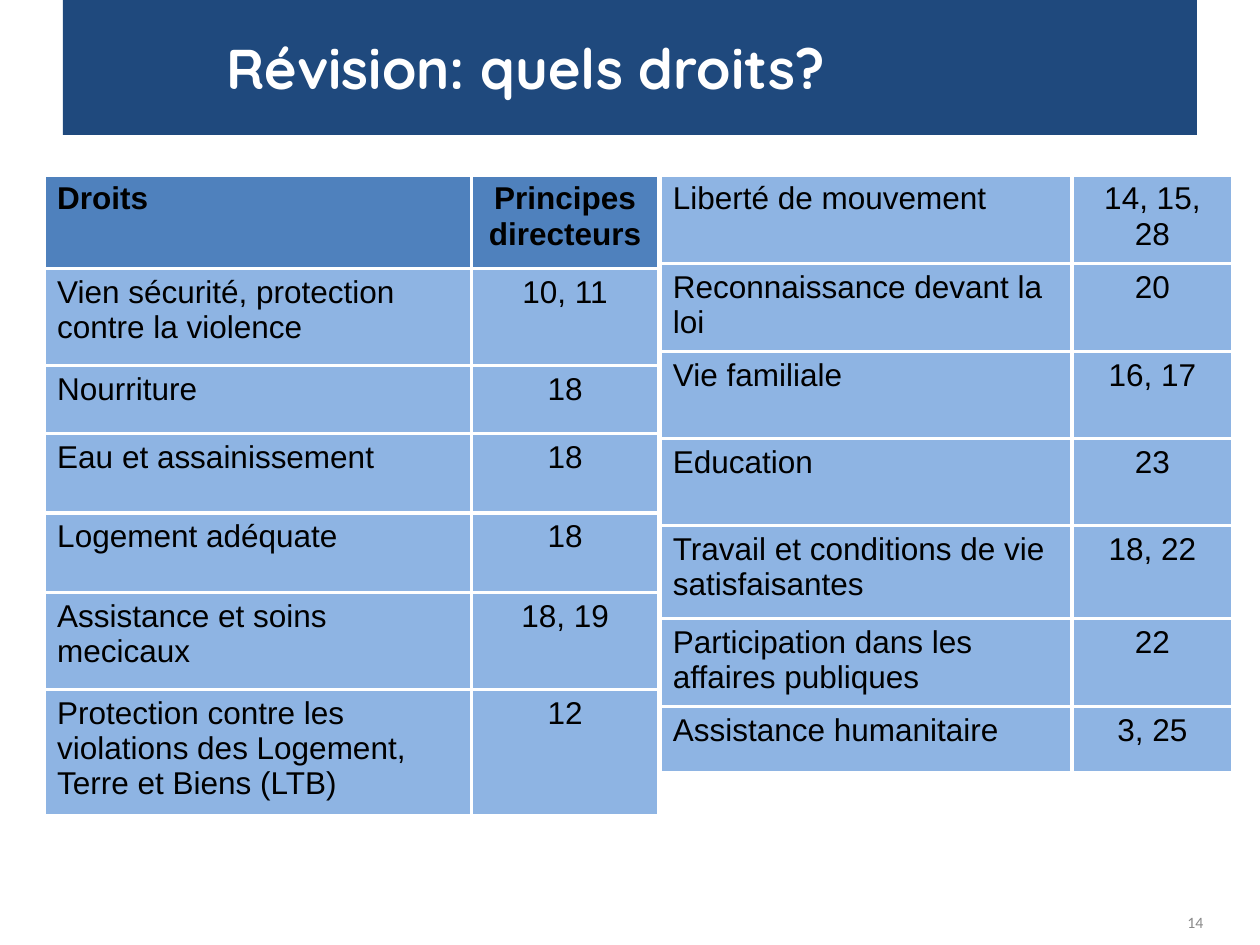
from pptx import Presentation
from pptx.dml.color import RGBColor as Rgb
from pptx.enum.shapes import MSO_SHAPE as Kind
from pptx.enum.text import MSO_ANCHOR as Anchor, PP_ALIGN as Align
from pptx.util import Cm, Pt
from lxml.etree import SubElement as Sub
from pptx.oxml.ns import qn

HEAD, BODY = "4F81BD", "8EB4E3"
LEFT = [
    ("Droits", "Principes directeurs", 1.88),
    ("Vien sécurité, protection contre la violence", "10, 11", 1.96),
    ("Nourriture", "18", 1.37),
    ("Eau et assainissement", "18", 1.6),
    ("Logement adéquate", "18", 1.6),
    ("Assistance et soins mecicaux", "18, 19", 1.96),
    ("Protection contre les violations des Logement, Terre et Biens (LTB)",
     "12", 1.96),
]
RIGHT = [
    ("Liberté de mouvement", "14, 15, 28", 1.63),
    ("Reconnaissance devant la loi", "20", 1.73),
    ("Vie familiale", "16, 17", 1.75),
    ("Education", "23", 1.75),
    ("Travail et conditions de vie satisfaisantes", "18, 22", 1.88),
    ("Participation dans les affaires publiques", "22", 1.57),
    ("Assistance humanitaire", "3, 25", 1.32),
]


def paint(fill, color):
    fill.solid()
    fill.fore_color.rgb = Rgb.from_string(color)


def write(frame, text, font, size, color, align=Align.LEFT, bold=False):
    para = frame.paragraphs[0]
    para.text = text
    para.alignment = align
    para.font.name = font
    para.font.size = Pt(size)
    para.font.bold = bold
    paint(para.font.fill, color)


def add_title(slide, text):
    bar = slide.shapes.add_shape(
        Kind.RECTANGLE, Cm(1.27), 0, Cm(22.86), Cm(2.72))
    bar.shadow.inherit = False
    paint(bar.fill, "1F497D")
    bar.line.fill.background()
    frame = bar.text_frame
    frame.word_wrap = True
    frame.vertical_anchor = Anchor.MIDDLE
    frame.margin_left, frame.margin_right = Cm(3.3), Cm(0.76)
    write(frame, text, "Quicksand", 32, "FFFFFF", bold=True)


def add_number(slide, text):
    box = slide.shapes.add_textbox(Cm(18.52), Cm(18.08), Cm(5.92), Cm(1.02))
    frame = box.text_frame
    frame.word_wrap = True
    frame.vertical_anchor = Anchor.MIDDLE
    frame.margin_left = frame.margin_right = Cm(0.18)
    frame.margin_top = frame.margin_bottom = Cm(0.1)
    write(frame, text, "Calibri", 9, "898989", Align.RIGHT)


def add_edges(cell, color, width):
    props = cell._tc.get_or_add_tcPr()
    for side in ("lnL", "lnR", "lnT", "lnB"):
        line = Sub(props, qn(f"a:{side}"), w=str(Pt(width)))
        Sub(Sub(line, qn("a:solidFill")), qn("a:srgbClr"), val=color)


def add_grid(slide, left, widths, rows, header=False):
    high = sum(row[-1] for row in rows)
    grid = slide.shapes.add_table(
        len(rows), len(widths), Cm(left), Cm(3.53),
        Cm(sum(widths)), Cm(high)).table
    grid.first_row = header
    grid.horz_banding = False
    for col, width in zip(grid.columns, widths):
        col.width = Cm(width)
    for i, (*texts, tall) in enumerate(rows):
        grid.rows[i].height = Cm(tall)
        top = header and i == 0
        for j, text in enumerate(texts):
            cell = grid.cell(i, j)
            add_edges(cell, "FFFFFF", 2.25)
            paint(cell.fill, HEAD if top else BODY)
            align = Align.CENTER if j else Align.LEFT
            write(cell.text_frame, text, "Arial", 18, "000000", align, top)


def main():
    deck = Presentation()
    deck.slide_width, deck.slide_height = Cm(25.4), Cm(19.05)
    slide = deck.slides.add_slide(deck.slide_layouts[6])
    add_number(slide, "14")
    add_title(slide, "Révision: quels droits?")
    add_grid(slide, 0.9, (8.6, 3.78), LEFT, header=True)
    add_grid(slide, 13.31, (8.3, 3.24), RIGHT)
    deck.save("out.pptx")


if __name__ == "__main__":
    main()
